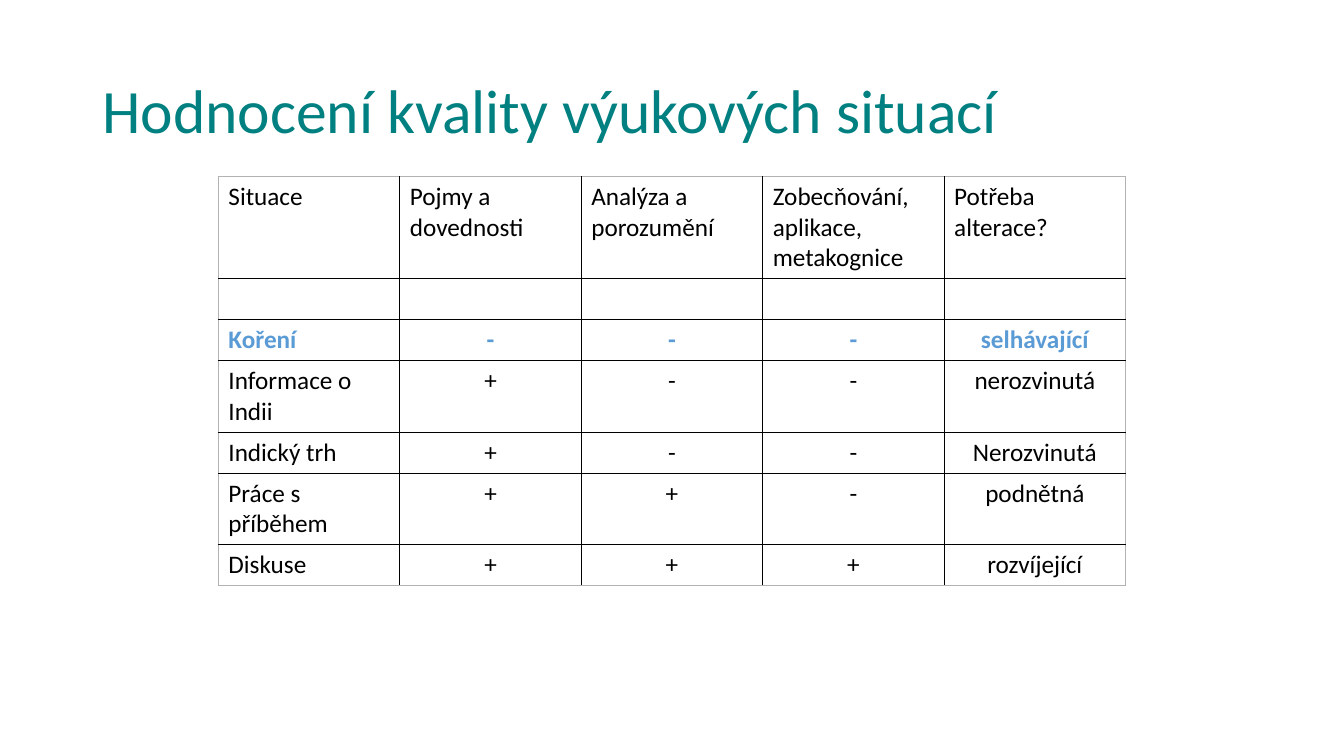
"""Build a slide that rates the quality of teaching situations in a table."""
from lxml import etree
from pptx import Presentation
from pptx.dml.color import RGBColor
from pptx.enum.text import MSO_ANCHOR, PP_ALIGN
from pptx.oxml.ns import qn
from pptx.util import Pt

LEFT, CENTER = PP_ALIGN.LEFT, PP_ALIGN.CENTER
MIDDLE = MSO_ANCHOR.MIDDLE
FONT = "Calibri"
COLORS = {
    "title": "008080",
    "text": "000000",
    "highlight": "5B9BD5",
    "inner": "000000",
    "outer": "B2B2B2",
}
COLUMN_WIDTH = 129.6
ROW_HEIGHT = 29.2
EXTRA_LINE = 22
HIGHLIGHTED = "Koření"
RATINGS = [
    ("Situace", "Pojmy a dovednosti", "Analýza a porozumění",
     "Zobecňování, aplikace, metakognice", "Potřeba alterace?"),
    ("", "", "", "", ""),
    (HIGHLIGHTED, "-", "-", "-", "selhávající"),
    ("Informace o Indii", "+", "-", "-", "nerozvinutá"),
    ("Indický trh", "+", "-", "-", "Nerozvinutá"),
    ("Práce s příběhem", "+", "+", "-", "podnětná"),
    ("Diskuse", "+", "+", "+", "rozvíjející"),
]
LINES_PER_ROW = [3, 1, 1, 2, 1, 2, 1]


def write(frame, text, size=18, color="text", bold=False, align=LEFT, spacing=1.0):
    """Write one formatted paragraph into a text frame."""
    paragraph = frame.paragraphs[0]
    paragraph.alignment = align
    paragraph.line_spacing = spacing
    if text:
        run = paragraph.add_run()
        run.text = text
        run.font.name = FONT
        run.font.size = Pt(size)
        run.font.bold = bold
        run.font.color.rgb = RGBColor.from_string(COLORS[color])


def add_title(slide, text):
    """Add the vertically centred slide title."""
    title = slide.shapes.add_textbox(Pt(66), Pt(28.75), Pt(828), Pt(104.4))
    title.text_frame.word_wrap = True
    title.text_frame.vertical_anchor = MIDDLE
    write(title.text_frame, text, size=44, color="title", spacing=0.9)


def set_border(cell, side, color):
    """Draw one side of a table cell."""
    line = etree.SubElement(cell._tc.get_or_add_tcPr(), qn(f"a:ln{side}"), w=str(Pt(1)))
    fill = etree.SubElement(line, qn("a:solidFill"))
    etree.SubElement(fill, qn("a:srgbClr"), val=COLORS[color])


def add_ratings(slide, left, top):
    """Add the ratings table with a light frame and dark inner lines."""
    heights = [ROW_HEIGHT + EXTRA_LINE * (lines - 1) for lines in LINES_PER_ROW]
    last_row, last_column = len(RATINGS) - 1, len(RATINGS[0]) - 1
    table = slide.shapes.add_table(
        len(RATINGS), len(RATINGS[0]), Pt(left), Pt(top),
        Pt(COLUMN_WIDTH * len(RATINGS[0])), Pt(sum(heights))).table
    table.first_row = table.horz_banding = False
    for column in table.columns:
        column.width = Pt(COLUMN_WIDTH)
    for r, (situation, height) in enumerate(zip(RATINGS, heights)):
        table.rows[r].height = Pt(height)
        highlighted = situation[0] == HIGHLIGHTED
        for c, text in enumerate(situation):
            cell = table.cell(r, c)
            on_frame = {"L": c == 0, "R": c == last_column,
                        "T": r == 0, "B": r == last_row}
            for side, outer in on_frame.items():
                set_border(cell, side, "outer" if outer else "inner")
            cell.fill.background()
            write(cell.text_frame, text, bold=highlighted,
                  color="highlight" if highlighted else "text",
                  align=CENTER if r and c else LEFT)


def main():
    """Build and save the slide."""
    deck = Presentation()
    deck.slide_width, deck.slide_height = Pt(960), Pt(540)
    slide = deck.slides.add_slide(deck.slide_layouts[6])
    add_title(slide, "Hodnocení kvality výukových situací")
    add_ratings(slide, left=156, top=126)
    deck.save("out.pptx")


if __name__ == "__main__":
    main()
